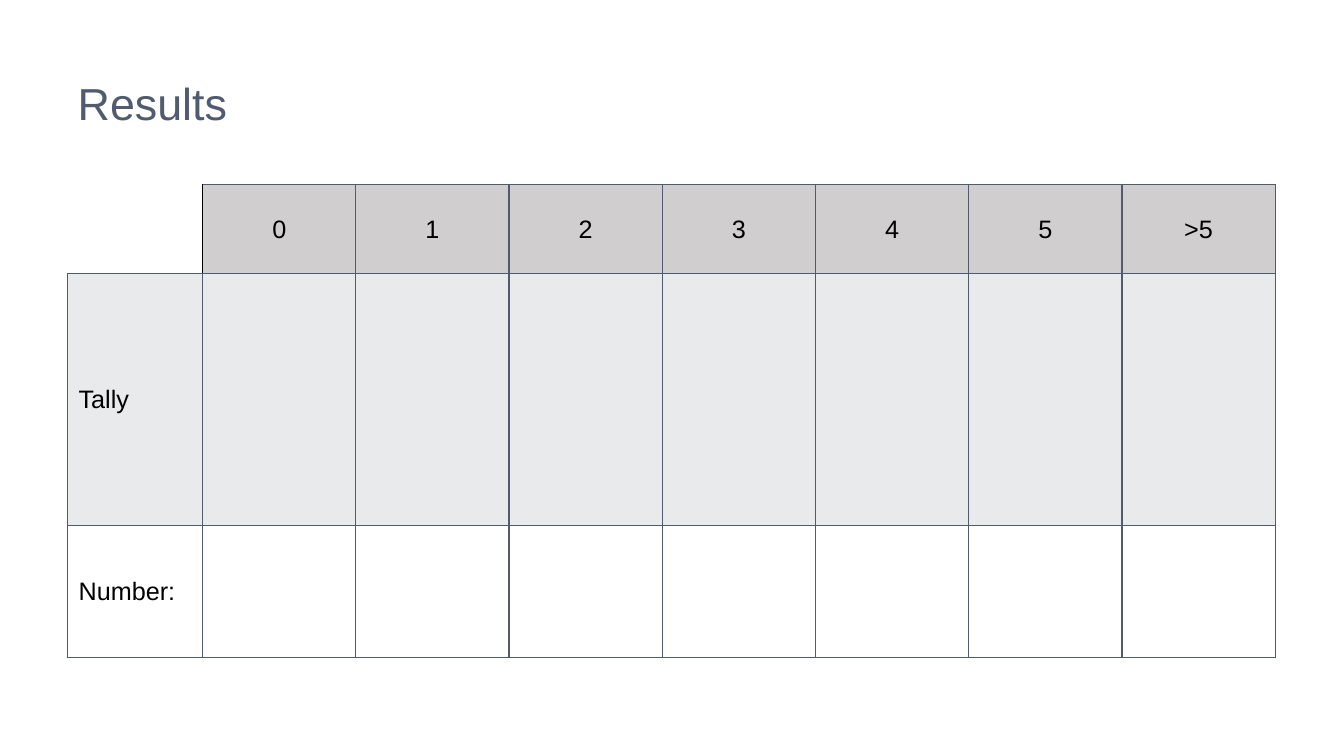
from dataclasses import dataclass

from lxml import etree
from pptx import Presentation
from pptx.dml.color import RGBColor
from pptx.enum.text import MSO_ANCHOR, PP_ALIGN
from pptx.oxml.ns import qn
from pptx.util import Inches, Pt

FONT = "Arial"
SLATE, BLACK = "515B70", "000000"
FIRST_COL, COUNT_COL = 1.34, 1.52


@dataclass
class Row:
    label: str
    values: list[str]
    height: float
    fill: str | None


ROWS = [
    Row("", ["0", "1", "2", "3", "4", "5", ">5"], 0.88, "D0CECE"),
    Row("Tally", [""] * 7, 2.5, "E9EAEB"),
    Row("Number:", [""] * 7, 1.31, None),
]


def rgb(color: str) -> RGBColor:
    return RGBColor.from_string(color)


def write(tf, text: str, *, size: float, color: str = BLACK,
          align=PP_ALIGN.LEFT, spacing: float = 1.0) -> None:
    p = tf.paragraphs[0]
    p.alignment, p.line_spacing = align, spacing
    r = p.add_run()
    r.text = text
    r.font.name, r.font.size, r.font.bold = FONT, Pt(size), False
    r.font.color.rgb = rgb(color)


def set_borders(cell, colors: dict[str, str | None]) -> None:
    """Draw 1 pt borders; a side without a colour gets no line."""
    tc_pr = cell._tc.get_or_add_tcPr()
    for side in "LRTB":
        ln = etree.SubElement(tc_pr, qn(f"a:ln{side}"), w=str(Pt(1)))
        if colors[side]:
            fill = etree.SubElement(ln, qn("a:solidFill"))
            etree.SubElement(fill, qn("a:srgbClr"), val=colors[side])
        else:
            etree.SubElement(ln, qn("a:noFill"))


def format_cell(cell, text: str, fill: str | None, align,
                borders: dict[str, str | None]) -> None:
    set_borders(cell, borders)
    if fill:
        cell.fill.solid()
        cell.fill.fore_color.rgb = rgb(fill)
    else:
        cell.fill.background()
    cell.vertical_anchor = MSO_ANCHOR.MIDDLE
    cell.margin_left = cell.margin_right = Inches(0.11)
    cell.margin_top = cell.margin_bottom = Inches(0.05)
    if text:
        write(cell.text_frame, text, size=18, align=align, spacing=1.07)


def add_tally_table(s) -> None:
    n_cols = len(ROWS[0].values) + 1
    table = s.shapes.add_table(len(ROWS), n_cols, Inches(0.67), Inches(1.83),
                               Inches(12), Inches(4.69)).table
    table.first_row = table.horz_banding = False
    for j, col in enumerate(table.columns):
        col.width = Inches(COUNT_COL if j else FIRST_COL)
    for i, row in enumerate(ROWS):
        table.rows[i].height = Inches(row.height)
        for j, text in enumerate([row.label, *row.values]):
            borders = dict.fromkeys("LRTB", SLATE)
            fill = row.fill
            # The corner is open, with a black line before the header
            if i == 0 and j == 0:
                borders.update(L=None, T=None, R=BLACK)
                fill = None
            elif i == 0 and j == 1:
                borders["L"] = BLACK
            align = PP_ALIGN.CENTER if j else PP_ALIGN.LEFT
            format_cell(table.cell(i, j), text, fill, align, borders)


def main() -> None:
    prs = Presentation()
    prs.slide_width, prs.slide_height = Inches(13.33), Inches(7.5)
    s = prs.slides.add_slide(prs.slide_layouts[5])

    # Title
    title = s.shapes.title
    title.left, title.top = Inches(0.67), Inches(0.6)
    title.width, title.height = Inches(12), Inches(0.84)
    title.text_frame.vertical_anchor = MSO_ANCHOR.MIDDLE
    write(title.text_frame, "Results", size=32, color=SLATE)

    # Tally table
    add_tally_table(s)
    prs.save("out.pptx")


if __name__ == "__main__":
    main()
